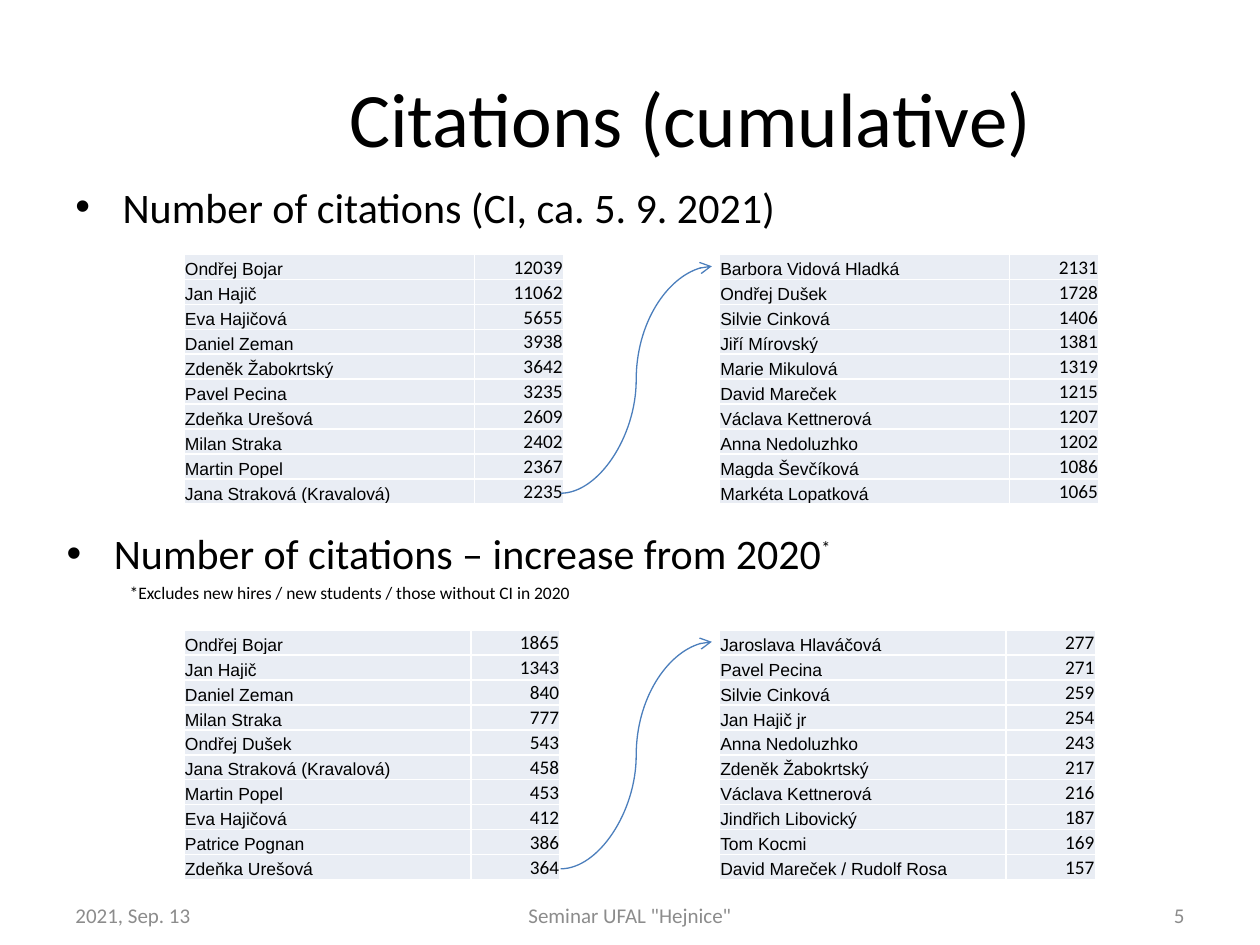
import pptx
import pptx.dml.color
import pptx.enum.shapes
import pptx.enum.text
import pptx.oxml
import pptx.oxml.ns
import pptx.util

Pt = pptx.util.Pt
ALIGN = pptx.enum.text.PP_ALIGN
ANCHOR = pptx.enum.text.MSO_ANCHOR
NAMESPACE = pptx.oxml.ns.nsdecls("a")

ROW_HEIGHT = 14.26
VALUE_WIDTH = 51
LEFT_TABLE = 105.1
RIGHT_TABLE = 411
TOTAL_TOP = 145.4
INCREASE_TOP = 360

TOTAL_LEADERS = [
    ("Ondřej Bojar", 12039), ("Jan Hajič", 11062), ("Eva Hajičová", 5655),
    ("Daniel Zeman", 3938), ("Zdeněk Žabokrtský", 3642), ("Pavel Pecina", 3235),
    ("Zdeňka Urešová", 2609), ("Milan Straka", 2402), ("Martin Popel", 2367),
    ("Jana Straková (Kravalová)", 2235),
]
TOTAL_FOLLOWERS = [
    ("Barbora Vidová Hladká", 2131), ("Ondřej Dušek", 1728), ("Silvie Cinková", 1406),
    ("Jiří Mírovský", 1381), ("Marie Mikulová", 1319), ("David Mareček", 1215),
    ("Václava Kettnerová", 1207), ("Anna Nedoluzhko", 1202), ("Magda Ševčíková", 1086),
    ("Markéta Lopatková", 1065),
]
INCREASE_LEADERS = [
    ("Ondřej Bojar", 1865), ("Jan Hajič", 1343), ("Daniel Zeman", 840),
    ("Milan Straka", 777), ("Ondřej Dušek", 543), ("Jana Straková (Kravalová)", 458),
    ("Martin Popel", 453), ("Eva Hajičová", 412), ("Patrice Pognan", 386),
    ("Zdeňka Urešová", 364),
]
INCREASE_FOLLOWERS = [
    ("Jaroslava Hlaváčová", 277), ("Pavel Pecina", 271), ("Silvie Cinková", 259),
    ("Jan Hajič jr", 254), ("Anna Nedoluzhko", 243), ("Zdeněk Žabokrtský", 217),
    ("Václava Kettnerová", 216), ("Jindřich Libovický", 187), ("Tom Kocmi", 169),
    ("David Mareček / Rudolf Rosa", 157),
]


def color(value):
    return pptx.dml.color.RGBColor.from_string(value)


def set_attributes(target, values):
    for name, value in values.items():
        setattr(target, name, value)


def add_run(paragraph, text, size, hex_color="000000", font="Calibri"):
    run = paragraph.add_run()
    run.text = text
    set_attributes(run.font, {"size": Pt(size), "name": font})
    run.font.color.rgb = color(hex_color)
    return run


def add_text_box(slide, left, top, width, height, anchor=ANCHOR.TOP):
    shape = slide.shapes.add_textbox(Pt(left), Pt(top), Pt(width), Pt(height))
    set_attributes(shape.text_frame, {"word_wrap": True, "vertical_anchor": anchor})
    return shape.text_frame


def add_label(slide, text, left, top, width, height, size, hex_color, alignment):
    frame = add_text_box(slide, left, top, width, height, ANCHOR.MIDDLE)
    paragraph = frame.paragraphs[0]
    paragraph.alignment = alignment
    add_run(paragraph, text, size, hex_color)


def indent(paragraph, margin, first_line):
    properties = paragraph._p.get_or_add_pPr()
    properties.set("marL", str(Pt(margin)))
    properties.set("indent", str(Pt(first_line)))
    return properties


def add_heading(slide, text, left, top):
    frame = add_text_box(slide, left, top, 648, 204)
    paragraph = frame.paragraphs[0]
    properties = indent(paragraph, 27, -27)
    properties.append(pptx.oxml.parse_xml(f'<a:buFont {NAMESPACE} typeface="Arial"/>'))
    properties.append(pptx.oxml.parse_xml(f'<a:buChar {NAMESPACE} char="•"/>'))
    add_run(paragraph, text, 24)
    return frame


def add_footnote(frame, text):
    marker = add_run(frame.paragraphs[0], "*", 18)
    marker.font._element.set("baseline", "48000")
    paragraph = frame.add_paragraph()
    indent(paragraph, 36, 0)
    paragraph.space_before = Pt(2)
    add_run(paragraph, text, 10)


def add_cell_borders(cell):
    properties = cell._tc.get_or_add_tcPr()
    for side in "LRTB":
        properties.append(pptx.oxml.parse_xml(
            f'<a:ln{side} {NAMESPACE} w="{Pt(1)}"><a:solidFill>'
            f'<a:srgbClr val="FFFFFF"/></a:solidFill></a:ln{side}>'))


def format_cell(cell, text, size, font, alignment):
    set_attributes(cell, {
        "margin_left": Pt(0.6), "margin_right": Pt(0.6), "margin_top": Pt(0.6),
        "margin_bottom": Pt(0), "vertical_anchor": ANCHOR.BOTTOM,
    })
    add_cell_borders(cell)
    cell.fill.solid()
    cell.fill.fore_color.rgb = color("E9EDF4")
    paragraph = cell.text_frame.paragraphs[0]
    paragraph.alignment = alignment
    add_run(paragraph, text, size, font=font)


def add_citation_table(slide, entries, left, top, name_width):
    shape = slide.shapes.add_table(
        len(entries), 2, Pt(left), Pt(top),
        Pt(name_width + VALUE_WIDTH), Pt(ROW_HEIGHT * len(entries)))
    table = shape.table
    set_attributes(table, {"first_row": False, "horz_banding": False})
    table.columns[0].width = Pt(name_width)
    table.columns[1].width = Pt(VALUE_WIDTH)
    for index, (name, count) in enumerate(entries):
        table.rows[index].height = Pt(ROW_HEIGHT)
        format_cell(table.cell(index, 0), name, 10, "Arial", ALIGN.LEFT)
        format_cell(table.cell(index, 1), str(count), 11, "Calibri", ALIGN.RIGHT)


def add_continuation_arrow(slide, table_top):
    connector = slide.shapes.add_connector(
        pptx.enum.shapes.MSO_CONNECTOR.CURVE,
        Pt(320.4), Pt(table_top + 136.5), Pt(406.8), Pt(table_top + 6.8))
    connector.line.width = Pt(0.75)
    connector.line.color.rgb = color("4B7EBC")
    connector.line._get_or_add_ln().append(
        pptx.oxml.parse_xml(f'<a:tailEnd {NAMESPACE} type="arrow"/>'))
    connector._element.spPr.append(pptx.oxml.parse_xml(f'<a:effectLst {NAMESPACE}/>'))


def main():
    presentation = pptx.Presentation()
    set_attributes(presentation, {"slide_width": Pt(720), "slide_height": Pt(540)})
    slide = presentation.slides.add_slide(presentation.slide_layouts[6])

    add_label(slide, "Citations (cumulative)", 105, 21.6, 579, 90, 44, "000000", ALIGN.CENTER)
    add_heading(slide, "Number of citations (CI, ca. 5. 9. 2021)", 36, 100)
    increase = add_heading(slide, "Number of citations – increase from 2020", 31, 298)
    add_footnote(increase, "*Excludes new hires / new students / those without CI in 2020")

    for top, name_width, leaders, followers in [
        (TOTAL_TOP, 166, TOTAL_LEADERS, TOTAL_FOLLOWERS),
        (INCREASE_TOP, 164, INCREASE_LEADERS, INCREASE_FOLLOWERS),
    ]:
        add_citation_table(slide, leaders, LEFT_TABLE, top, name_width)
        add_citation_table(slide, followers, RIGHT_TABLE, top, name_width)
        add_continuation_arrow(slide, top)

    for text, left, width, alignment in [
        ("2021, Sep. 13", 36, 168, ALIGN.LEFT),
        ('Seminar UFAL "Hejnice"', 246, 228, ALIGN.CENTER),
        ("5", 516, 168, ALIGN.RIGHT),
    ]:
        add_label(slide, text, left, 508.5, width, 28.75, 12, "8C8C8C", alignment)

    presentation.save("out.pptx")


if __name__ == "__main__":
    main()
